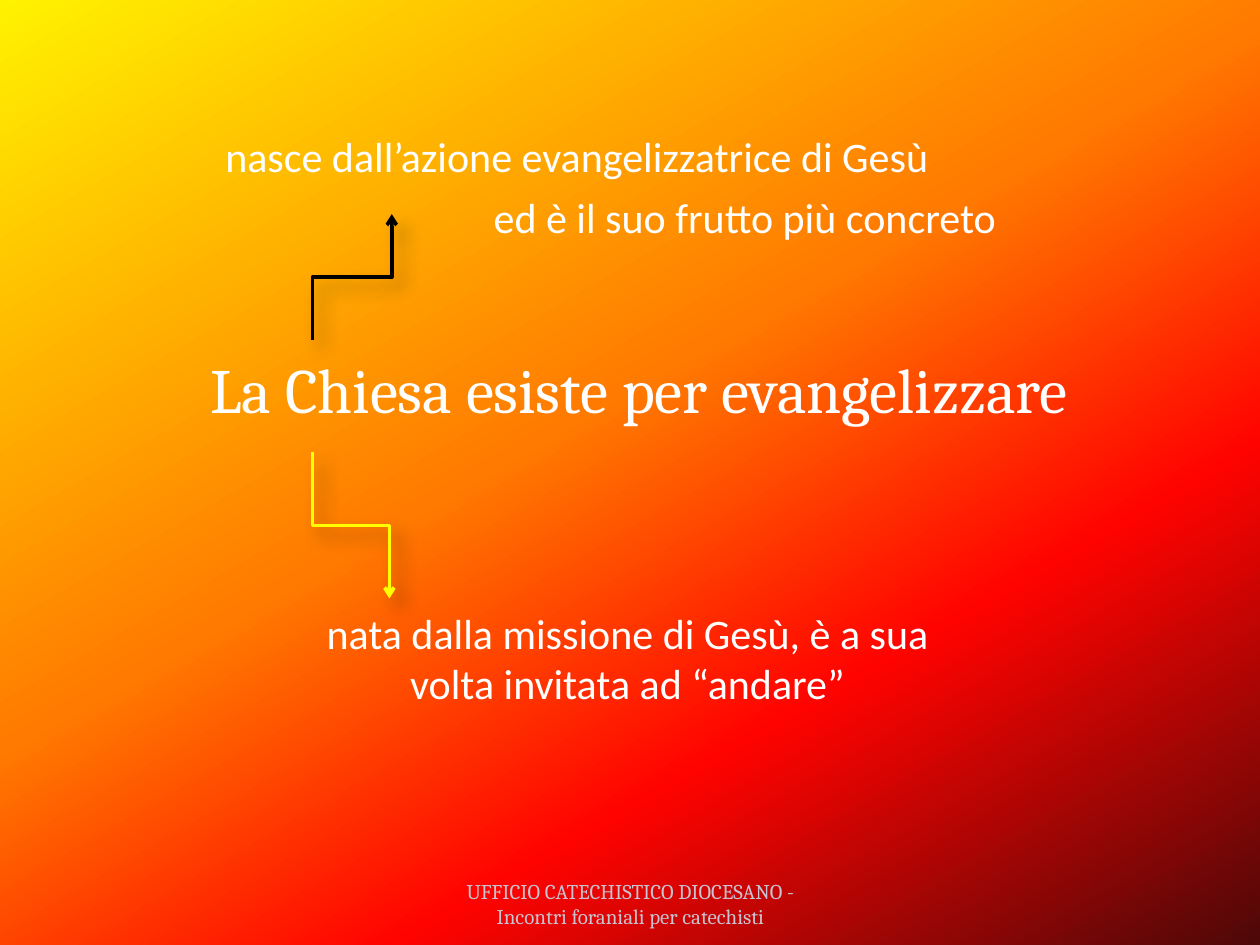
from dataclasses import dataclass

from pptx import Presentation
from pptx.dml.color import RGBColor
from pptx.enum import shapes, text
from pptx.oxml import parse_xml
from pptx.oxml.ns import nsdecls
from pptx.util import Pt


@dataclass(frozen=True)
class Theme:
    white: str = "FFFFFF"
    grey: str = "C9C2D1"
    yellow: str = "FFFF00"
    black: str = "000000"
    stops: tuple = ((0, "FFF200"), (45, "FF7A00"), (70, "FF0300"), (100, "4D0808"))
    head: str = "Cambria"
    body: str = "Calibri"
    big: int = 36
    mid: int = 24
    small: int = 12


THEME = Theme()


def paint(slide):
    """Fill the background with the diagonal gradient."""
    fill = slide.background.fill
    fill.gradient()
    fill.gradient_angle = 300
    stops = fill.gradient_stops
    grad = slide._element.cSld.bg.bgPr.find(".//{*}gsLst")
    for old in list(grad):
        grad.remove(old)
    for place, color in THEME.stops:
        grad.append(parse_xml(
            f'<a:gs {nsdecls("a")} pos="{place * 1000}"><a:srgbClr val="{color}"/></a:gs>'))


def write(shape, words, font, size, color, align=None, anchor=text.MSO_ANCHOR.TOP, wrap=True):
    frame = shape.text_frame
    frame.text = words
    frame.word_wrap = wrap
    frame.auto_size = text.MSO_AUTO_SIZE.NONE
    frame.vertical_anchor = anchor
    para = frame.paragraphs[0]
    para.alignment = align
    para.font.name = font
    para.font.size = Pt(size)
    para.font.color.rgb = RGBColor.from_string(color)


def add_title(slide, box, words):
    title = slide.shapes.title
    title.left, title.top, title.width, title.height = map(Pt, box)
    write(title, words, THEME.head, THEME.big, THEME.white, text.PP_ALIGN.CENTER)


def add_text(slide, box, words, font=THEME.body, size=THEME.mid, color=THEME.white, **style):
    write(slide.shapes.add_textbox(*map(Pt, box)), words, font, size, color, **style)


def add_bent(slide, start, end, color):
    """Draw an elbow arrow that leaves and arrives vertically."""
    (x1, y1), (x2, y2) = start, end
    mid_x, mid_y = (x1 + x2) / 2, (y1 + y2) / 2
    half_w, half_h = abs(y2 - y1) / 2, (x2 - x1) / 2
    down = y2 > y1
    rise = -half_h if down else half_h
    # Laid out sideways, then turned a quarter about its centre.
    line = slide.shapes.add_connector(
        shapes.MSO_CONNECTOR.ELBOW, Pt(mid_x + half_w), Pt(mid_y + rise),
        Pt(mid_x - half_w), Pt(mid_y - rise))
    props = line._element.spPr
    props.xfrm.set("rot", str((270 if down else 90) * 60000))
    line.line.color.rgb = RGBColor.from_string(color)
    line.line.width = Pt(2)
    props.ln.append(parse_xml(f'<a:tailEnd {nsdecls("a")} type="arrow"/>'))
    props.append(parse_xml(
        f'<a:effectLst {nsdecls("a")}><a:outerShdw blurRad="{Pt(10.2)}" dist="{Pt(8)}" '
        f'dir="2700000" algn="tl" rotWithShape="0"><a:srgbClr val="{THEME.black}">'
        '<a:alpha val="35000"/></a:srgbClr></a:outerShdw></a:effectLst>'))


def main():
    deck = Presentation()
    deck.slide_width, deck.slide_height = Pt(720), Pt(540)
    slide = deck.slides.add_slide(deck.slide_layouts[5])
    center = text.PP_ALIGN.CENTER
    paint(slide)
    add_text(slide, (246.2, 505.4, 228.2, 28.8),
             "UFFICIO CATECHISTICO DIOCESANO - Incontri foraniali per catechisti",
             THEME.head, THEME.small, THEME.grey, align=center, anchor=text.MSO_ANCHOR.BOTTOM)
    add_title(slide, (65.5, 196.6, 607, 51), "La Chiesa esiste per evangelizzare ")
    add_bent(slide, (178.6, 258.5), (222.5, 342), THEME.yellow)
    add_bent(slide, (178.6, 194.4), (223.9, 122.4), THEME.black)
    add_text(slide, (121.7, 71.3, 476, 65.5), "nasce dall’azione evangelizzatrice di Gesù")
    add_text(slide, (275, 105.8, 342, 36), "ed è il suo frutto più concreto", wrap=False)
    add_text(slide, (178.6, 343.4, 360, 94.3),
             "nata dalla missione di Gesù, è a sua volta invitata ad “andare”", align=center)
    deck.save("out.pptx")


if __name__ == "__main__":
    main()
